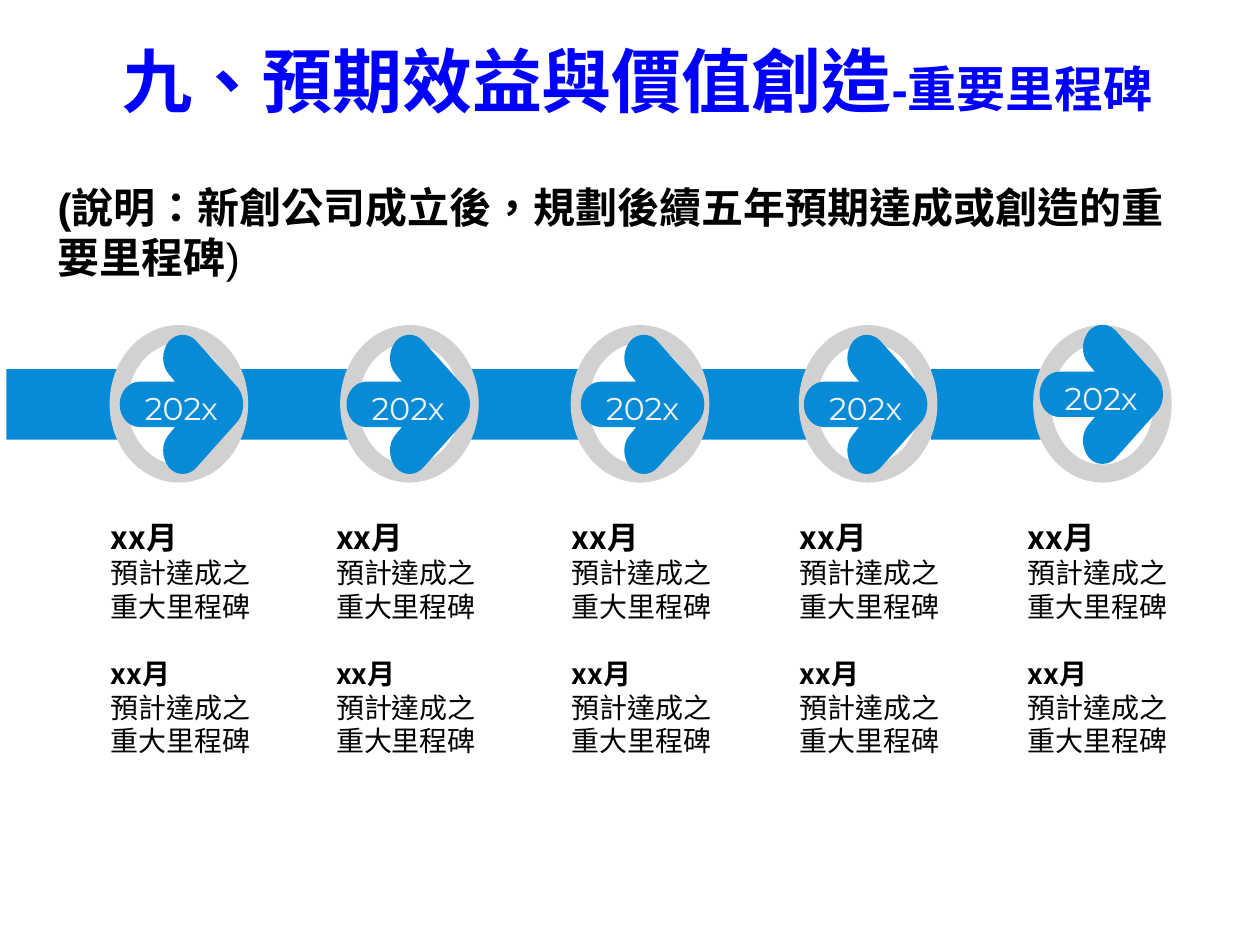
import pptx
import pptx.util
import pptx.dml.color
import pptx.enum.shapes
import pptx.enum.text
import pptx.oxml.ns
import lxml.etree

Inches = pptx.util.Inches
Pt = pptx.util.Pt
MSO_SHAPE = pptx.enum.shapes.MSO_SHAPE
ANCHOR = pptx.enum.text.MSO_ANCHOR
ALIGN = pptx.enum.text.PP_ALIGN
qn = pptx.oxml.ns.qn

ARROW_WIDTH, ARROW_HEIGHT = 0.98, 1.1
ARROW_TIP = (ARROW_WIDTH, ARROW_HEIGHT / 2)
LOWER_HALF = [
    [(0.98, 0.59), (0.97, 0.64), (0.94, 0.68)],
    [(0.61, 1.05)],
    [(0.55, 1.12), (0.45, 1.12), (0.39, 1.05)],
    [(0.33, 0.97), (0.33, 0.86), (0.39, 0.79)],
    [(0.44, 0.73)],
    [(0.16, 0.73)],
    [(0.07, 0.73), (0, 0.65), (0, 0.55)],
]
BAND_LEFTS = (7.39, 5.53, 3.71, 1.88, 0.05)
STAGES = [
    (0.87, 0.95, 2.66, 0.78),
    (2.70, 2.75, 2.66, 2.57),
    (4.53, 4.61, 2.66, 4.44),
    (6.34, 6.38, 2.66, 6.25),
    (8.20, 8.25, 2.58, 8.06),
]


def rgb(value):
    return pptx.dml.color.RGBColor.from_string(value)


def add_text(paragraph, text, size, color="000000", font="Arial", bold=False):
    run = paragraph.add_run()
    run.text = text
    run.font.size = Pt(size)
    run.font.bold = bold
    run.font.name = font
    run.font.color.rgb = rgb(color)
    properties = run._r.get_or_add_rPr()
    properties.set("lang", "zh-TW")
    east_asian = lxml.etree.SubElement(properties, qn("a:ea"))
    east_asian.set("typeface", "Noto Sans CJK SC")


def arrow_segments():
    starts = [ARROW_TIP] + [segment[-1] for segment in LOWER_HALF[:-1]]
    upper_half = []
    for start, segment in reversed(list(zip(starts, LOWER_HALF))):
        backwards = segment[-2::-1] + [start]
        upper_half.append([(x, ARROW_HEIGHT - y) for x, y in backwards])
    return LOWER_HALF + upper_half


def add_step(outline, tag, points=()):
    step = lxml.etree.SubElement(outline, qn(tag))
    for x, y in points:
        point = lxml.etree.SubElement(step, qn("a:pt"))
        point.set("x", str(int(Inches(x))))
        point.set("y", str(int(Inches(y))))


class Milestones:
    blue = "078BD7"
    gray = "D1D1D1"
    title_blue = "0000FF"
    label_gray = "F2F2F2"
    body_font = "Noto Sans CJK SC"

    def __init__(self, slide):
        self.slide = slide

    def paint(self, shape, color):
        shape.shadow.inherit = False
        shape.fill.solid()
        shape.fill.fore_color.rgb = rgb(color)
        shape.line.fill.background()

    def title(self, heading, topic):
        title = self.slide.shapes.title
        title.left, title.top, title.width, title.height = map(Inches, (0.56, 0.01, 9, 1.25))
        title.text_frame.vertical_anchor = ANCHOR.MIDDLE
        paragraph = title.text_frame.paragraphs[0]
        paragraph.alignment = ALIGN.CENTER
        add_text(paragraph, heading, 40, color=self.title_blue, bold=True)
        add_text(paragraph, topic, 28, color=self.title_blue, bold=True)

    def text_box(self, left, top, width, height):
        box = self.slide.shapes.add_textbox(*map(Inches, (left, top, width, height)))
        box.text_frame.word_wrap = True
        return box.text_frame

    def explanation(self, text, closing):
        paragraph = self.text_box(0.36, 1.39, 9.28, 0.91).paragraphs[0]
        add_text(paragraph, text, 24, bold=True)
        add_text(paragraph, closing, 24)

    def preset(self, kind, bounds, adjustment, color):
        shape = self.slide.shapes.add_shape(kind, *map(Inches, bounds))
        shape.adjustments[0] = adjustment
        self.paint(shape, color)

    def band(self, left):
        self.preset(MSO_SHAPE.ROUNDED_RECTANGLE, (left, 2.93, 0.91, 0.56), 0, self.blue)

    def ring(self, left):
        self.preset(MSO_SHAPE.DONUT, (left, 2.58, 1.1, 1.25), 0.13, self.gray)

    def arrow(self, left, top, year):
        width, height = Inches(ARROW_WIDTH), Inches(ARROW_HEIGHT)
        builder = self.slide.shapes.build_freeform(0, 0)
        builder.add_line_segments([(width, 0), (width, height), (0, height)])
        arrow = builder.convert_to_shape(Inches(left), Inches(top))
        outline = next(arrow._element.iter(qn("a:path")))
        for step in list(outline):
            outline.remove(step)
        add_step(outline, "a:moveTo", [ARROW_TIP])
        for segment in arrow_segments():
            add_step(outline, "a:cubicBezTo" if len(segment) == 3 else "a:lnTo", segment)
        add_step(outline, "a:close")
        self.paint(arrow, self.blue)
        frame = arrow.text_frame
        frame.word_wrap = False
        frame.vertical_anchor = ANCHOR.MIDDLE
        paragraph = frame.paragraphs[0]
        paragraph.alignment = ALIGN.CENTER
        paragraph.line_spacing = 1.2
        paragraph.space_before = paragraph.space_after = Pt(2)
        add_text(paragraph, year, 18, color=self.label_gray, font="Montserrat")

    def goals(self, left, month, goal):
        frame = self.text_box(left, 4.06, 1.33, 2.29)
        for index, month_size in enumerate((18, 16)):
            heading = frame.add_paragraph() if index else frame.paragraphs[0]
            if index:
                heading.space_before = Pt(19.3)
            add_text(heading, month, month_size, font=self.body_font, bold=True)
            add_text(frame.add_paragraph(), goal, 16, font=self.body_font)


def main():
    deck = pptx.Presentation()
    deck.slide_width, deck.slide_height = Inches(10), Inches(7.5)
    page = Milestones(deck.slides.add_slide(deck.slide_layouts[5]))
    page.title("九、預期效益與價值創造", "-重要里程碑")
    page.explanation("(說明：新創公司成立後，規劃後續五年預期達成或創造的重要里程碑", ")")
    for band_left in BAND_LEFTS:
        page.band(band_left)
    for ring_left, *_ in STAGES:
        page.ring(ring_left)
    for _, arrow_left, arrow_top, _ in STAGES:
        page.arrow(arrow_left, arrow_top, "202x")
    for *_, goals_left in STAGES:
        page.goals(goals_left, "xx月", "預計達成之重大里程碑")
    deck.save("out.pptx")


if __name__ == "__main__":
    main()
